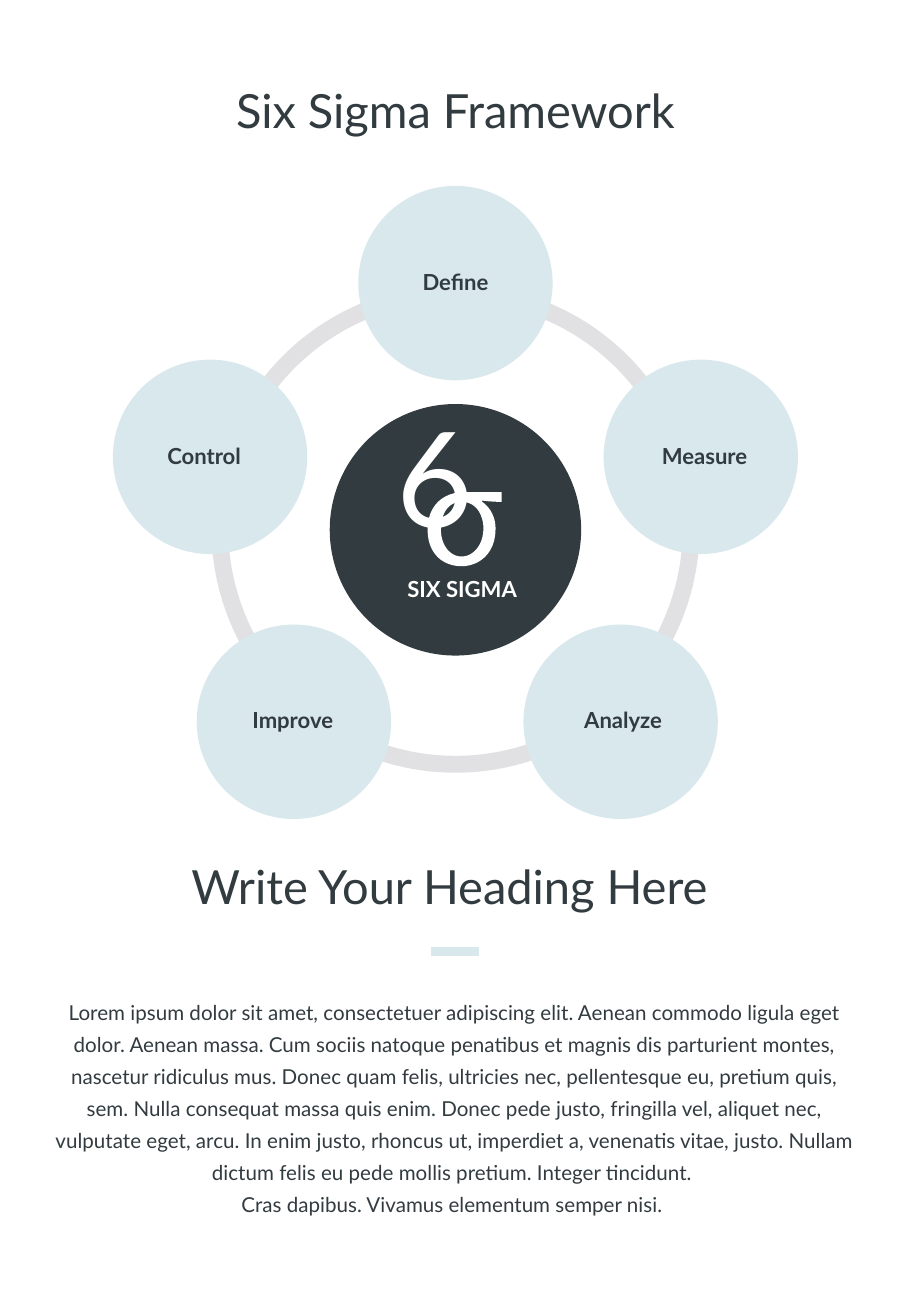
from dataclasses import dataclass

import pptx
import pptx.dml.color
import pptx.enum.shapes
import pptx.enum.text
import pptx.oxml.ns
import pptx.util
from lxml import etree
from pptx.util import Inches

COLORS = {"dark": "323C40", "pale": "D8E8ED", "ring": "E1E1E3", "white": "FFFFFF"}
FONT = "Lato"
STAGE_DIAMETER = 1.6
LABEL_WIDTH, LABEL_HEIGHT = 1.22, 0.2
CURVE_STEPS = 12

Point = tuple[float, float]
Box = tuple[float, float, float, float]


@dataclass(frozen=True)
class Stage:
    name: str
    center_x: float
    center_y: float
    label_x: float


@dataclass(frozen=True)
class Text:
    paragraphs: tuple[str, ...]
    box: Box
    size: float
    line_spacing: float
    color: str = "dark"
    bold: bool = False
    grow: bool = True
    anchor: pptx.enum.text.MSO_ANCHOR = pptx.enum.text.MSO_ANCHOR.MIDDLE


STAGES = [
    Stage("Analyze", 5.11, 5.94, 5.13),
    Stage("Improve", 2.42, 5.94, 2.41),
    Stage("Measure", 5.77, 3.76, 5.8),
    Stage("Control", 1.73, 3.76, 1.68),
    Stage("Define", 3.75, 2.33, 3.75),
]

TITLE = Text(("Six Sigma Framework",), (0.48, 0.76, 6.54, 0.38), 27.9, 0.8)
HEADING = Text(("Write Your Heading Here ",), (0.45, 7.14, 6.6, 0.38), 27.9, 0.8)
EMBLEM_TEXTS = [
    Text(("6",), (3.17, 3.41, 0.82, 1.15), 78.4, 0.9, "white", grow=False),
    Text(("SIX SIGMA",), (3.17, 4.76, 1.27, 0.19), 13.1, 0.9, "white", True, False),
]
BODY = Text(
    (
        "Lorem ipsum dolor sit amet, consectetuer adipiscing elit. Aenean commodo "
        "ligula eget dolor. Aenean massa. Cum sociis natoque penatibus et magnis dis "
        "parturient montes, nascetur ridiculus mus. Donec quam felis, ultricies nec, "
        "pellentesque eu, pretium quis, sem. Nulla consequat massa quis enim. Donec "
        "pede justo, fringilla vel, aliquet nec, vulputate eget, arcu. In enim justo, "
        "rhoncus ut, imperdiet a, venenatis vitae, justo. Nullam dictum felis eu pede "
        "mollis pretium. Integer tincidunt. ",
        "Cras dapibus. Vivamus elementum semper nisi. ",
    ),
    (0.45, 8.17, 6.59, 1.84), 12.2, 1.3, anchor=pptx.enum.text.MSO_ANCHOR.TOP,
)

# Each contour is a start point followed by segments:
# one point is a straight line, three points are a cubic curve.
SIGMA_CONTOURS = [
    ((3.98, 4.35), [
        [(3.98, 4.25), (3.93, 4.13), (3.8, 4.13)],
        [(3.68, 4.13), (3.63, 4.24), (3.63, 4.36)],
        [(3.63, 4.48), (3.7, 4.58), (3.8, 4.58)],
        [(3.9, 4.58), (3.98, 4.48), (3.98, 4.35)],
    ]),
    ((4.13, 4.13), [
        [(4.1, 4.13), (4.06, 4.13), (3.97, 4.12)],
        [(3.97, 4.13)],
        [(4.04, 4.18), (4.08, 4.26), (4.08, 4.35)],
        [(4.08, 4.57), (3.93, 4.66), (3.8, 4.66)],
        [(3.64, 4.66), (3.52, 4.55), (3.52, 4.36)],
        [(3.52, 4.16), (3.65, 4.05), (3.82, 4.05)],
        [(4.13, 4.05)],
    ]),
]


def rgb(name: str) -> pptx.dml.color.RGBColor:
    return pptx.dml.color.RGBColor.from_string(COLORS[name])


def fill_plain(shape, color: str) -> None:
    """Give a shape a solid fill with no outline."""
    shape.fill.solid()
    shape.fill.fore_color.rgb = rgb(color)
    shape.line.fill.background()


def add_circle(slide, center_x: float, center_y: float, diameter: float):
    shape = slide.shapes.add_shape(
        pptx.enum.shapes.MSO_SHAPE.OVAL,
        Inches(center_x - diameter / 2), Inches(center_y - diameter / 2),
        Inches(diameter), Inches(diameter),
    )
    shape.shadow.inherit = False
    return shape


def add_text(slide, text: Text) -> None:
    text_box = slide.shapes.add_textbox(*(Inches(value) for value in text.box))
    frame = text_box.text_frame
    frame.margin_left = frame.margin_right = frame.margin_top = frame.margin_bottom = 0
    frame.word_wrap = True
    frame.vertical_anchor = text.anchor
    auto_size = pptx.enum.text.MSO_AUTO_SIZE
    frame.auto_size = auto_size.SHAPE_TO_FIT_TEXT if text.grow else auto_size.NONE
    frame.text = "\n".join(text.paragraphs)
    for paragraph in frame.paragraphs:
        paragraph.alignment = pptx.enum.text.PP_ALIGN.CENTER
        paragraph.line_spacing = text.line_spacing
        for run in paragraph.runs:
            run.font.name = FONT
            run.font.size = pptx.util.Pt(text.size)
            run.font.bold = text.bold
            run.font.color.rgb = rgb(text.color)


def flatten(start: Point, segments: list[list[Point]]) -> list[Point]:
    """Turn lines and cubic curves into a list of straight-line vertices."""
    points = [start]
    for segment in segments:
        if len(segment) == 1:
            points.append(segment[0])
            continue
        controls = [points[-1], *segment]
        for step in range(1, CURVE_STEPS + 1):
            t = step / CURVE_STEPS
            weights = ((1 - t) ** 3, 3 * t * (1 - t) ** 2, 3 * t * t * (1 - t), t ** 3)
            points.append(tuple(
                sum(weight * control[axis] for weight, control in zip(weights, controls))
                for axis in (0, 1)
            ))
    return points


def add_sigma(slide) -> None:
    contours = [
        [(Inches(x), Inches(y)) for x, y in flatten(start, segments)]
        for start, segments in SIGMA_CONTOURS
    ]
    inner, outer = contours
    builder = slide.shapes.build_freeform(*inner[0])
    builder.add_line_segments(inner[1:], close=True)
    builder.move_to(*outer[0])
    builder.add_line_segments(outer[1:], close=True)
    sigma = builder.convert_to_shape()
    sigma.shadow.inherit = False
    fill_plain(sigma, "white")


def add_emblem(slide) -> None:
    fill_plain(add_circle(slide, 3.75, 4.36, 2.07), "dark")
    add_sigma(slide)
    for text in EMBLEM_TEXTS:
        add_text(slide, text)


def add_cycle(slide) -> None:
    ring = add_circle(slide, 3.75, 4.35, 3.88)
    ring.fill.background()
    ring.line.color.rgb = rgb("ring")
    ring.line.width = pptx.util.Pt(10)
    for stage in STAGES:
        circle = add_circle(slide, stage.center_x, stage.center_y, STAGE_DIAMETER)
        fill_plain(circle, "pale")
    for stage in STAGES:
        box = (stage.label_x - LABEL_WIDTH / 2, stage.center_y - LABEL_HEIGHT / 2,
               LABEL_WIDTH, LABEL_HEIGHT)
        add_text(slide, Text((stage.name,), box, 13.1, 0.9, bold=True))


def add_divider(slide) -> None:
    divider = slide.shapes.add_connector(
        pptx.enum.shapes.MSO_CONNECTOR.STRAIGHT,
        Inches(3.55), Inches(7.83), Inches(3.94), Inches(7.83),
    )
    divider.line.color.rgb = rgb("pale")
    divider.line.width = pptx.util.Pt(5)
    etree.SubElement(divider._element.spPr, pptx.oxml.ns.qn("a:effectLst"))


def main() -> None:
    presentation = pptx.Presentation()
    presentation.slide_width = Inches(7.5)
    presentation.slide_height = Inches(10.83)
    slide = presentation.slides.add_slide(presentation.slide_layouts[6])
    add_text(slide, TITLE)
    add_emblem(slide)
    add_cycle(slide)
    add_text(slide, BODY)
    add_text(slide, HEADING)
    add_divider(slide)
    presentation.save("out.pptx")


if __name__ == "__main__":
    main()
